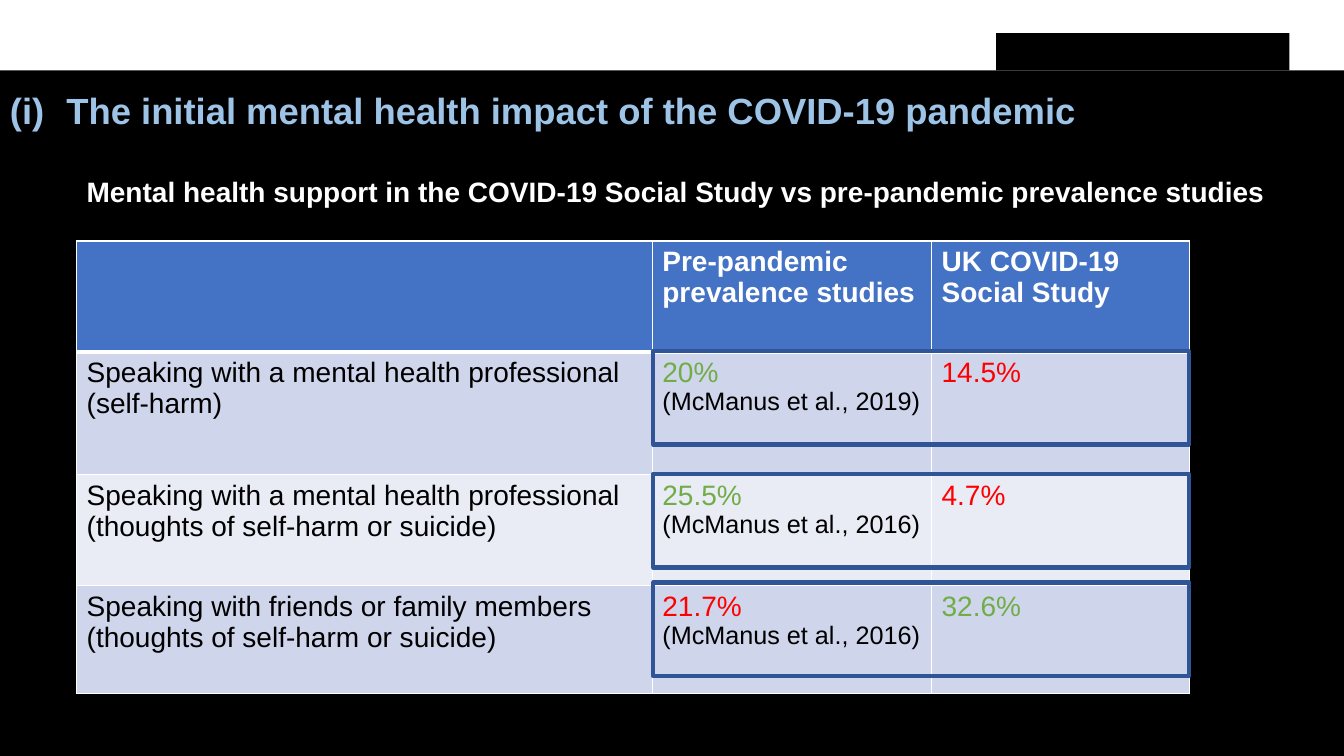
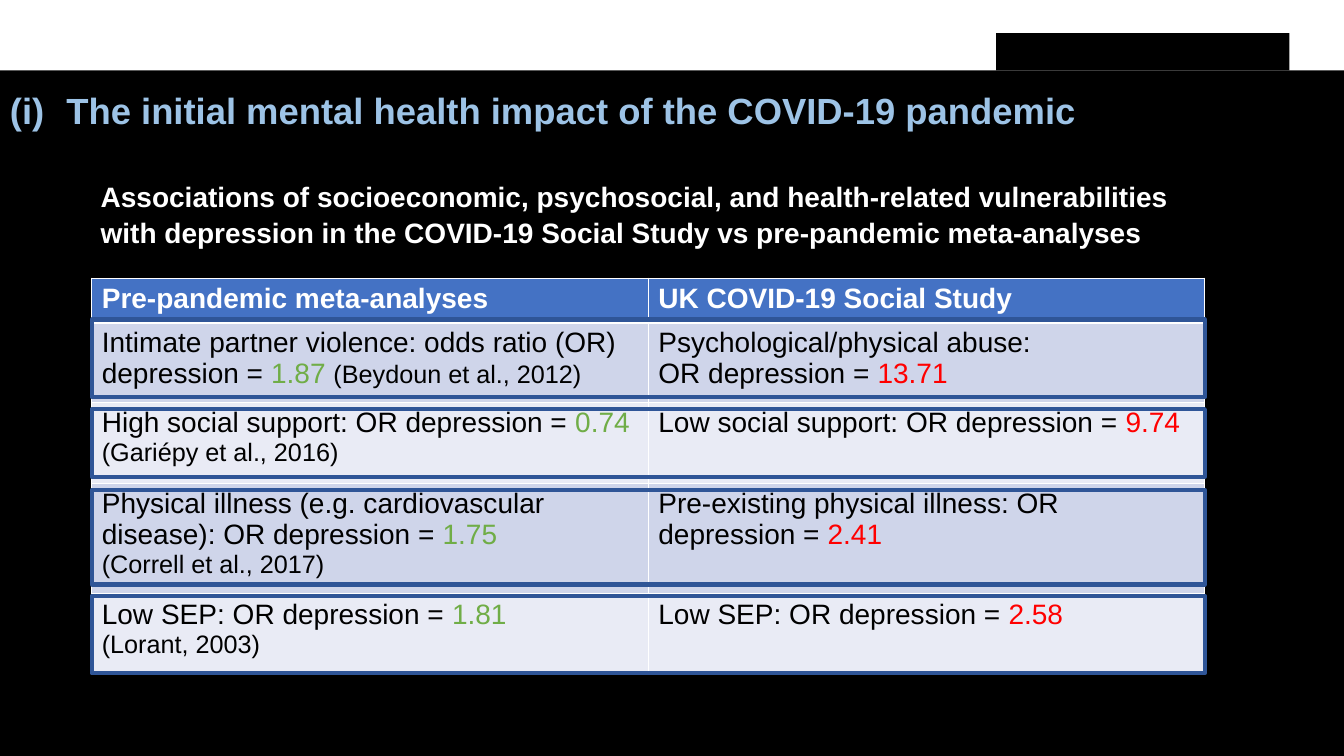
from dataclasses import dataclass
from typing import NamedTuple

from lxml.etree import SubElement
from pptx import Presentation
from pptx.dml.color import RGBColor
from pptx.enum.shapes import MSO_SHAPE
from pptx.enum.text import MSO_AUTO_SIZE
from pptx.oxml import parse_xml
from pptx.oxml.ns import nsdecls, qn
from pptx.shapes.autoshape import Shape
from pptx.slide import Slide
from pptx.table import _Cell
from pptx.text.text import _Paragraph, _Run
from pptx.util import Inches, Pt


@dataclass(frozen=True)
class Theme:
    font: str = "Arial"
    black: str = "000000"
    white: str = "FFFFFF"
    title: str = "9DC3E6"
    header: str = "4472C4"
    bands: tuple[str, str] = ("CFD5EA", "E9EBF5")
    outline: str = "2F5597"
    green: str = "70AD47"
    red: str = "FF0000"
    title_size: int = 26
    body_size: int = 20
    citation_size: int = 18
    thin: int = 1
    thick: int = 3


class Span(NamedTuple):
    text: str
    color: str
    size: int


class Box(NamedTuple):
    left: float
    top: float
    width: float
    height: float


Line = list[Span]
Row = list[list[Line]]


@dataclass(frozen=True)
class Comparison:
    subtitle: str
    subtitle_box: Box
    table_left: float
    table_top: float
    column_widths: list[float]
    row_heights: list[float]
    headings: list[str]
    rows: list[Row]
    outlines: list[Box]


THEME = Theme()
SLIDE_WIDTH, SLIDE_HEIGHT = 13.33, 7.5
TITLE = "The initial mental health impact of the COVID-19 pandemic"
TITLE_INDENT = Inches(0.56)
BAND_BOX = Box(0, 0, SLIDE_WIDTH, 0.7)
LOGO_BOX = Box(9.88, 0.33, 2.91, 0.37)
TITLE_BOX = Box(0, 0.83, 10.89, 0.54)


def plain(text: str) -> Span:
    return Span(text, THEME.black, THEME.body_size)


def green(text: str) -> Span:
    return Span(text, THEME.green, THEME.body_size)


def red(text: str) -> Span:
    return Span(text, THEME.red, THEME.body_size)


def citation(text: str) -> Span:
    return Span(text, THEME.black, THEME.citation_size)


def support_row(label: str, before: Span, source: str, during: Span) -> Row:
    return [[[plain(label)]], [[before], [citation(source)]], [[during]]]


def odds_row(before: str, before_odds: str, source: str, during: str, during_odds: str) -> Row:
    return [
        [[plain(before), green(before_odds)], [citation(source)]],
        [[plain(during), red(during_odds)]],
    ]


def lengths(box: Box) -> list[int]:
    return [Inches(value) for value in box]


def format_run(run: _Run, color: str, size: int, bold: bool) -> None:
    run.font.name = THEME.font
    run.font.size = Pt(size)
    run.font.bold = bold
    run.font.color.rgb = RGBColor.from_string(color)


def add_text(slide: Slide, box: Box, text: str, color: str, size: int, wrap: bool) -> _Paragraph:
    shape = slide.shapes.add_textbox(*lengths(box))
    shape.text_frame.word_wrap = wrap
    shape.text_frame.auto_size = MSO_AUTO_SIZE.SHAPE_TO_FIT_TEXT
    paragraph = shape.text_frame.paragraphs[0]
    paragraph.text = text
    format_run(paragraph.runs[0], color, size, True)
    return paragraph


def add_rectangle(slide: Slide, box: Box) -> Shape:
    shape = slide.shapes.add_shape(MSO_SHAPE.RECTANGLE, *lengths(box))
    shape.shadow.inherit = False
    return shape


def add_block(slide: Slide, box: Box, color: str) -> None:
    shape = add_rectangle(slide, box)
    shape.fill.solid()
    shape.fill.fore_color.rgb = RGBColor.from_string(color)
    shape.line.fill.background()


def add_outline(slide: Slide, box: Box) -> None:
    shape = add_rectangle(slide, box)
    shape.fill.background()
    shape.line.color.rgb = RGBColor.from_string(THEME.outline)
    shape.line.width = Pt(THEME.thick)


def add_title(slide: Slide) -> None:
    paragraph = add_text(slide, TITLE_BOX, TITLE, THEME.title, THEME.title_size, False)
    properties = paragraph._p.get_or_add_pPr()
    properties.set("marL", str(TITLE_INDENT))
    properties.set("indent", str(-TITLE_INDENT))
    SubElement(properties, qn("a:buAutoNum"), type="romanLcParenBoth")


def style_cell(cell: _Cell, fill: str, top: int, bottom: int) -> None:
    cell.fill.solid()
    cell.fill.fore_color.rgb = RGBColor.from_string(fill)
    properties = cell._tc.get_or_add_tcPr()
    borders = {"lnL": THEME.thin, "lnR": THEME.thin, "lnT": top, "lnB": bottom}
    for position, (tag, width) in enumerate(borders.items()):
        border = parse_xml(
            f'<a:{tag} {nsdecls("a")} w="{Pt(width)}"><a:solidFill>'
            f'<a:srgbClr val="{THEME.white}"/></a:solidFill></a:{tag}>'
        )
        properties.insert(position, border)


def fill_cell(cell: _Cell, lines: list[Line], bold: bool) -> None:
    for index, line in enumerate(lines):
        frame = cell.text_frame
        paragraph = frame.add_paragraph() if index else frame.paragraphs[0]
        for span in line:
            run = paragraph.add_run()
            run.text = span.text
            format_run(run, span.color, span.size, bold)


def add_comparison_table(slide: Slide, comparison: Comparison) -> None:
    widths, heights = comparison.column_widths, comparison.row_heights
    box = Box(comparison.table_left, comparison.table_top, sum(widths), sum(heights))
    table = slide.shapes.add_table(len(heights), len(widths), *lengths(box)).table
    table.first_row = table.horz_banding = False
    for column, width in zip(table.columns, widths):
        column.width = Inches(width)
    for row, height in zip(table.rows, heights):
        row.height = Inches(height)
    headings = [
        [[Span(text, THEME.white, THEME.body_size)]] if text else []
        for text in comparison.headings
    ]
    for row_index, row in enumerate([headings, *comparison.rows]):
        is_header = row_index == 0
        fill = THEME.header if is_header else THEME.bands[(row_index - 1) % 2]
        top = THEME.thick if row_index == 1 else THEME.thin
        bottom = THEME.thick if is_header else THEME.thin
        for column_index, lines in enumerate(row):
            cell = table.cell(row_index, column_index)
            style_cell(cell, fill, top, bottom)
            fill_cell(cell, lines, is_header)


def add_comparison_slide(presentation: Presentation, comparison: Comparison) -> None:
    slide = presentation.slides.add_slide(presentation.slide_layouts[6])
    slide.background.fill.solid()
    slide.background.fill.fore_color.rgb = RGBColor.from_string(THEME.black)
    add_block(slide, BAND_BOX, THEME.white)
    add_block(slide, LOGO_BOX, THEME.black)
    add_title(slide)
    subtitle = add_text(
        slide, comparison.subtitle_box, comparison.subtitle, THEME.white, THEME.body_size, True
    )
    subtitle.line_spacing = 1.07
    add_comparison_table(slide, comparison)
    for box in comparison.outlines:
        add_outline(slide, box)


SUPPORT = Comparison(
    subtitle="Mental health support in the COVID-19 Social Study vs pre-pandemic prevalence studies",
    subtitle_box=Box(0.76, 1.66, 12.05, 0.44),
    table_left=0.76,
    table_top=2.39,
    column_widths=[5.71, 2.77, 2.56],
    row_heights=[1.1, 1.22, 1.1, 1.07],
    headings=["", "Pre-pandemic prevalence studies", "UK COVID-19 Social Study"],
    rows=[
        support_row("Speaking with a mental health professional (self-harm)",
                    green("20%"), "(McManus et al., 2019)", red("14.5%")),
        support_row("Speaking with a mental health professional (thoughts of self-harm or suicide)",
                    green("25.5%"), "(McManus et al., 2016)", red("4.7%")),
        support_row("Speaking with friends or family members (thoughts of self-harm or suicide)",
                    red("21.7%"), "(McManus et al., 2016)", green("32.6%")),
    ],
    outlines=[Box(6.48, top, 5.31, 0.93) for top in (3.48, 4.7, 5.78)],
)

VULNERABILITIES = Comparison(
    subtitle="Associations of socioeconomic, psychosocial, and health-related vulnerabilities "
             "with depression in the COVID-19 Social Study vs pre-pandemic meta-analyses",
    subtitle_box=Box(0.9, 1.71, 11.04, 0.77),
    table_left=0.91,
    table_top=2.76,
    column_widths=[5.52, 5.52],
    row_heights=[0.42, 0.8, 0.8, 1.1, 0.8],
    headings=["Pre-pandemic meta-analyses", "UK COVID-19 Social Study"],
    rows=[
        [
            [[plain("Intimate partner violence: odds ratio (OR) depression = "),
              green("1.87 "), citation("(Beydoun et al., 2012)")]],
            [[plain("Psychological/physical abuse:")],
             [plain("OR depression = "), red("13.71")]],
        ],
        odds_row("High social support: OR depression = ", "0.74", "(Gariépy et al., 2016)",
                 "Low social support: OR depression = ", "9.74"),
        odds_row("Physical illness (e.g. cardiovascular disease): OR depression = ", "1.75",
                 "(Correll et al., 2017)",
                 "Pre-existing physical illness: OR depression = ", "2.41"),
        odds_row("Low SEP: OR depression = ", "1.81", "(Lorant, 2003)",
                 "Low SEP: OR depression = ", "2.58"),
    ],
    outlines=[
        Box(0.91, top, 11.04, height)
        for top, height in ((3.17, 0.77), (4.06, 0.67), (4.86, 0.94), (5.91, 0.77))
    ],
)


def main() -> None:
    presentation = Presentation()
    presentation.slide_width = Inches(SLIDE_WIDTH)
    presentation.slide_height = Inches(SLIDE_HEIGHT)
    for comparison in (SUPPORT, VULNERABILITIES):
        add_comparison_slide(presentation, comparison)
    presentation.save("out.pptx")


if __name__ == "__main__":
    main()
